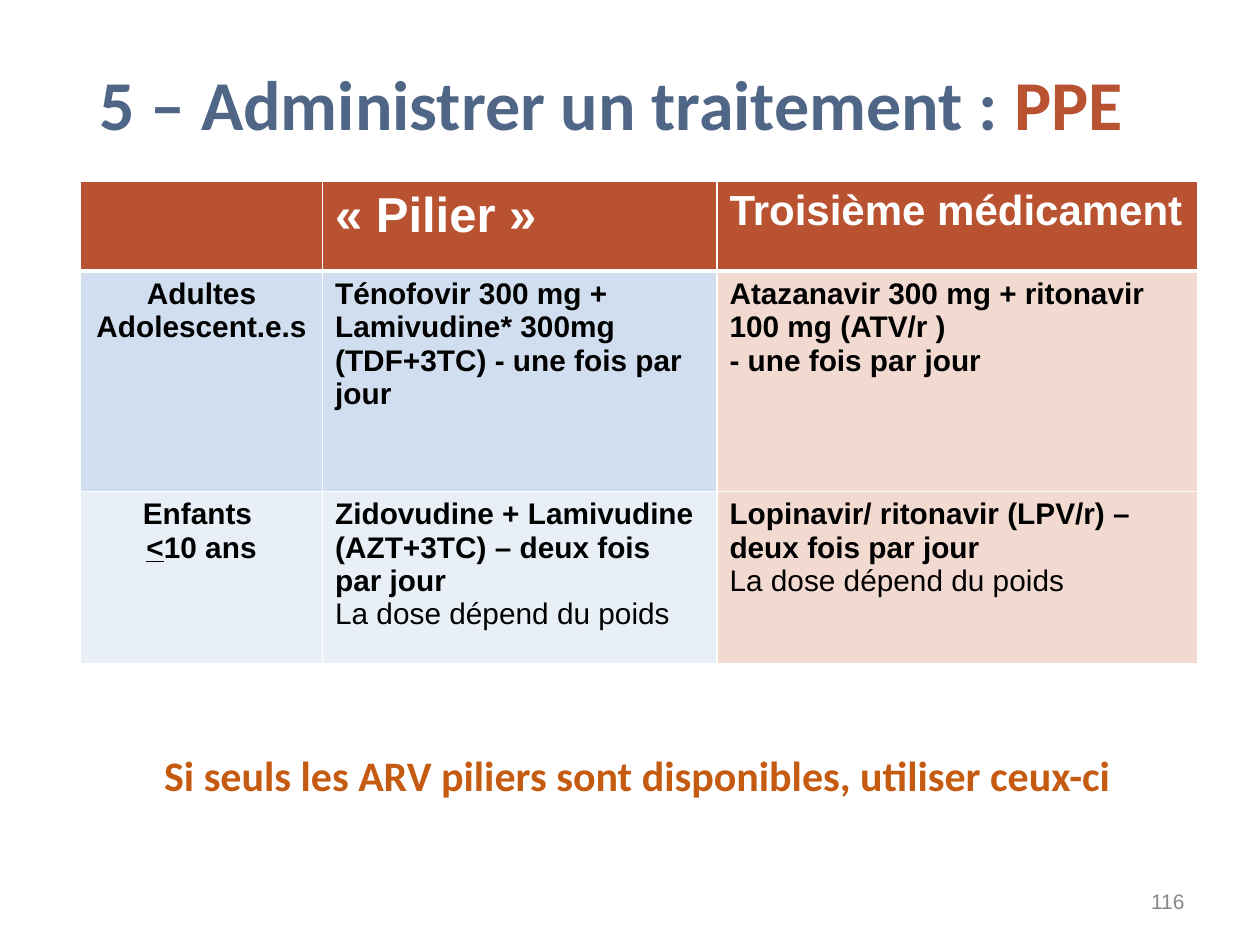
from lxml.etree import SubElement
from pptx import Presentation
from pptx.dml.color import RGBColor
from pptx.enum.text import MSO_ANCHOR as Anchor, PP_ALIGN as Align
from pptx.oxml.ns import qn
from pptx.util import Inches, Pt

COLORS = {
    "rust": "B85231", "slate": "506687", "orange": "C55A11", "grey": "888888",
    "white": "FFFFFF", "black": "000000", "blue": "D0DEEF", "pale": "E9EFF7",
    "pink": "F3DAD1",
}
COLUMNS = [1.92, 3.13, 3.82]
ROWS = [0.71, 1.75, 1.37]
HEADERS = [("", 28), ("« Pilier »", 28), ("Troisième médicament", 24)]
DOSE = "La dose dépend du poids"
REGIMENS = [
    [["Adultes", "Adolescent.e.s"],
     ["Ténofovir 300 mg + Lamivudine* 300mg (TDF+3TC) - une fois par jour"],
     ["Atazanavir 300 mg + ritonavir 100 mg (ATV/r )", "- une fois par jour"]],
    [["Enfants ", "<10 ans"],
     ["Zidovudine + Lamivudine (AZT+3TC) – deux fois par jour", DOSE],
     ["Lopinavir/ ritonavir (LPV/r) – deux fois par jour", DOSE]],
]
FILLS = [["blue", "blue", "pink"], ["pale", "pale", "pink"]]


def color(name):
    """Return the named colour."""
    return RGBColor.from_string(COLORS[name])


def add_span(para, text, size, tint, bold=True, font="Arial"):
    """Add a formatted run to a paragraph."""
    span = para.add_run()
    span.text = text
    span.font.name, span.font.size, span.font.bold = font, Pt(size), bold
    span.font.color.rgb = color(tint)
    return span


def add_text(page, box, spans, align=Align.LEFT, anchor=Anchor.MIDDLE):
    """Add a one-paragraph text box and return its paragraph."""
    frame = page.shapes.add_textbox(*map(Inches, box)).text_frame
    frame.word_wrap, frame.vertical_anchor = True, anchor
    para = frame.paragraphs[0]
    para.alignment = align
    for span in spans:
        add_span(para, *span)
    return para


def style_cell(cell, fill, bottom=1):
    """Fill a cell and give it white borders."""
    cell.fill.solid()
    cell.fill.fore_color.rgb = color(fill)
    properties = cell._tc.get_or_add_tcPr()
    for index, (side, width) in enumerate([("L", 1), ("R", 1), ("T", 1), ("B", bottom)]):
        line = SubElement(properties, qn(f"a:ln{side}"), w=str(Pt(width)))
        solid = SubElement(line, qn("a:solidFill"))
        SubElement(solid, qn("a:srgbClr"), val=COLORS["white"])
        properties.insert(index, line)


def add_title(page, box):
    """Add the two-colour title."""
    para = add_text(page, box, [
        ("5 – Administrer un traitement : ", 40, "slate", True, "Calibri"),
        ("PPE", 40, "rust", True, "Calibri"),
    ])
    para.line_spacing = 0.9


def fill_regimen(cell, lines, centered):
    """Write the lines of a regimen into a table cell."""
    for index, text in enumerate(lines):
        frame = cell.text_frame
        para = frame.add_paragraph() if index else frame.paragraphs[0]
        para.alignment = Align.CENTER if centered else Align.LEFT
        if text.startswith("<"):
            add_span(para, "<", 17, "black").font.underline = True
            text = text[1:]
        add_span(para, text, 17, "black", text != DOSE)


def add_regimens(page, left, top):
    """Add the table of regimens by age group."""
    table = page.shapes.add_table(
        len(ROWS), len(COLUMNS), Inches(left), Inches(top),
        Inches(sum(COLUMNS)), Inches(sum(ROWS))).table
    for column, width in zip(table.columns, COLUMNS):
        column.width = Inches(width)
    for row, height in zip(table.rows, ROWS):
        row.height = Inches(height)
    for index, (text, size) in enumerate(HEADERS):
        cell = table.cell(0, index)
        style_cell(cell, "rust", bottom=3)
        if text:
            add_span(cell.text_frame.paragraphs[0], text, size, "white")
    for row, (regimens, fills) in enumerate(zip(REGIMENS, FILLS), 1):
        for column, (lines, fill) in enumerate(zip(regimens, fills)):
            cell = table.cell(row, column)
            style_cell(cell, fill)
            fill_regimen(cell, lines, column == 0)


def add_advice(page, box):
    """Add the closing advice."""
    text = "Si seuls les ARV piliers sont disponibles, utiliser ceux-ci"
    add_text(page, box, [(text, 24, "orange", True, "Calibri")], Align.CENTER, Anchor.TOP)


def add_number(page, box):
    """Add the page number."""
    add_text(page, box, [("116", 12, "grey", False)], Align.RIGHT)


def main():
    """Build and save the deck."""
    deck = Presentation()
    deck.slide_width, deck.slide_height = Inches(10), Inches(7.5)
    page = deck.slides.add_slide(deck.slide_layouts[6])
    add_advice(page, (1, 5.9, 8.12, 0.5))
    add_regimens(page, 0.64, 1.44)
    add_number(page, (7.17, 6.95, 2.33, 0.4))
    add_title(page, (0.69, 0.56, 8.62, 0.59))
    deck.save("out.pptx")


if __name__ == "__main__":
    main()
